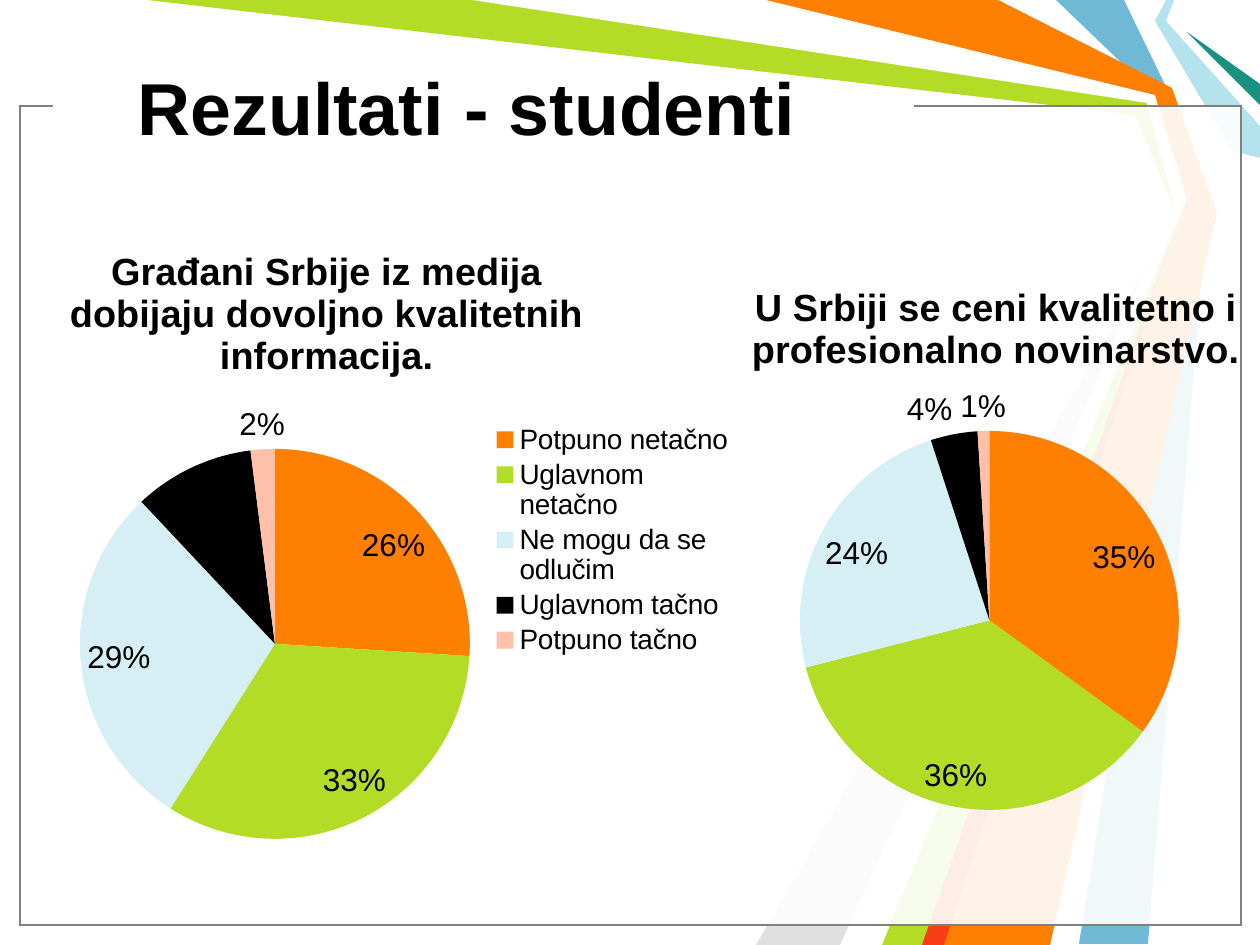
from dataclasses import dataclass

from lxml import etree
from pptx import Presentation
from pptx import util as u
from pptx.chart.data import CategoryChartData
from pptx.dml.color import RGBColor
from pptx.enum import chart as ch, shapes, text
from pptx.oxml.ns import qn

PX = 914400 / 126


@dataclass(frozen=True)
class Theme:
    font: str = "Arial"
    ink: str = "000000"
    paper: str = "FFFFFF"
    frame: str = "808080"
    blue: str = "6FB9D7"
    green: str = "B3DC27"
    grey: str = "E0E0E0"
    aqua: str = "B4E3EE"
    teal: str = "189180"
    orange: str = "FF7F00"
    red: str = "F93D17"
    pale_blue: str = "D6EFF5"
    peach: str = "FFC0AA"
    title: float = 42
    heading: float = 21.6
    label: float = 18
    legend: float = 16
    panel_opacity: int = 69


THEME = Theme()

RIBBONS = [
    (THEME.blue, [(1124, 0), (1171, 97), (1207, 210), (1148, 944), (1079, 944),
                  (1197, 210), (1155, 95), (1056, 0)]),
    (THEME.green, [(147, 0), (483, 0), (1152, 98), (1187, 213), (935, 945),
                   (872, 945), (1178, 218), (1135, 115)]),
    (THEME.grey, [(840, 945), (1168, 228), (756, 945)]),
    (THEME.paper, [(472, 0), (1147, 103), (1174, 204), (851, 945), (882, 945),
                   (1186, 199), (1155, 95), (756, 0)]),
    (THEME.aqua, [(1166, 0), (1155, 21), (1232, 151), (1260, 158), (1260, 126),
                  (1166, 21), (1174, 0)]),
    (THEME.teal, [(1260, 105), (1187, 32), (1260, 84)]),
    (THEME.orange, [(766, 0), (998, 0), (1172, 88), (1217, 213), (1050, 945),
                    (924, 945), (1187, 199), (1155, 95)]),
    (THEME.red, [(922, 945), (1174, 231), (944, 945)]),
]

ANSWERS = ["Potpuno netačno", "Uglavnom netačno", "Ne mogu da se odlučim",
           "Uglavnom tačno", "Potpuno tačno"]
ANSWER_COLOURS = [THEME.orange, THEME.green, THEME.pale_blue, THEME.ink, THEME.peach]


def px(*lengths):
    return [u.Emu(round(length * PX)) for length in lengths]


def style_font(font, size, bold=False):
    font.name = THEME.font
    font.size = u.Pt(size)
    font.bold = bold
    font.color.rgb = RGBColor.from_string(THEME.ink)


def paint(shape, fill, line=None):
    shape.shadow.inherit = False
    shape.fill.solid()
    shape.fill.fore_color.rgb = RGBColor.from_string(fill)
    if line:
        shape.line.color.rgb = RGBColor.from_string(line)
        shape.line.width = u.Pt(0.75)
    else:
        shape.line.fill.background()


def add_ribbon(slide, colour, corners):
    outline = slide.shapes.build_freeform(*corners[0], scale=PX)
    outline.add_line_segments(corners[1:], close=True)
    paint(outline.convert_to_shape(), colour)


def add_panel(slide, box, line=None, opacity=None):
    panel = slide.shapes.add_shape(shapes.MSO_SHAPE.RECTANGLE, *px(*box))
    paint(panel, THEME.paper, line)
    if opacity:
        colour = panel.fill._xPr.find(qn("a:solidFill"))[0]
        etree.SubElement(colour, qn("a:alpha")).set("val", str(opacity * 1000))


def add_title(slide, wording, box):
    title = slide.shapes.title
    title.left, title.top, title.width, title.height = px(*box)
    slide.shapes._spTree.append(title._element)
    frame = title.text_frame
    frame.vertical_anchor = text.MSO_ANCHOR.MIDDLE
    frame.paragraphs[0].alignment = text.PP_ALIGN.LEFT
    run = frame.paragraphs[0].add_run()
    run.text = wording
    style_font(run.font, THEME.title, bold=True)


def place(part, index, chart_box, left, top, width=None, height=None, inner=False):
    for old in part.findall(qn("c:layout")):
        part.remove(old)
    layout = etree.Element(qn("c:layout"))
    manual = etree.SubElement(layout, qn("c:manualLayout"))
    x, y, w, h = chart_box
    settings = [("xMode", "edge"), ("yMode", "edge"),
                ("x", round((left - x) / w, 4)), ("y", round((top - y) / h, 4))]
    if inner:
        settings.insert(0, ("layoutTarget", "inner"))
    if width:
        settings += [("w", round(width / w, 4)), ("h", round(height / h, 4))]
    for tag, value in settings:
        etree.SubElement(manual, qn(f"c:{tag}")).set("val", str(value))
    part.insert(index, layout)


def add_pie(slide, question, shares, box, heading_at, pie_box, legend_box=None):
    answers = CategoryChartData()
    answers.categories = ANSWERS
    answers.add_series(question, shares)
    chart = slide.shapes.add_chart(ch.XL_CHART_TYPE.PIE, *px(*box), answers).chart
    style_font(chart.font, THEME.label)

    chart.has_title = True
    run = chart.chart_title.text_frame.paragraphs[0].add_run()
    run.text = question
    style_font(run.font, THEME.heading, bold=True)
    place(chart.chart_title._element, 1, box, *heading_at)

    plot = chart.plots[0]
    plot.vary_by_categories = True
    for index, colour in enumerate(ANSWER_COLOURS):
        fill = plot.series[0].points[index].format.fill
        fill.solid()
        fill.fore_color.rgb = RGBColor.from_string(colour)
    plot.has_data_labels = True
    labels = plot.data_labels
    labels.show_percentage = True
    labels.show_value = False
    labels.number_format = "0%"
    labels.number_format_is_linked = False
    labels.position = ch.XL_LABEL_POSITION.BEST_FIT
    style_font(labels.font, THEME.label)
    place(chart._chartSpace.chart.plotArea, 0, box, *pie_box, inner=True)

    chart.has_legend = legend_box is not None
    if legend_box:
        chart.legend.position = ch.XL_LEGEND_POSITION.RIGHT
        chart.legend.include_in_layout = False
        style_font(chart.legend.font, THEME.legend)
        place(chart.legend._element, 1, box, *legend_box)


def main():
    deck = Presentation()
    deck.slide_width, deck.slide_height = px(1260, 945)
    slide = deck.slides.add_slide(deck.slide_layouts[5])
    for colour, corners in RIBBONS:
        add_ribbon(slide, colour, corners)
    for line in (THEME.ink, THEME.frame):
        add_panel(slide, (20, 106, 1221, 819), line, THEME.panel_opacity)
    add_panel(slide, (53, 93, 861, 21))
    add_title(slide, "Rezultati - studenti", (125, 28, 868, 157))
    add_pie(slide, "Građani Srbije iz medija dobijaju dovoljno kvalitetnih informacija.",
            [26, 33, 29, 10, 2], (49, 220, 699, 636), (63, 240),
            (80, 449, 390, 390), (490, 420, 245, 240))
    add_pie(slide, "U Srbiji se ceni kvalitetno i profesionalno novinarstvo.",
            [35, 36, 24, 4, 1], (650, 246, 679, 581), (745, 276),
            (800, 431, 379, 379))
    deck.save("out.pptx")


if __name__ == "__main__":
    main()
